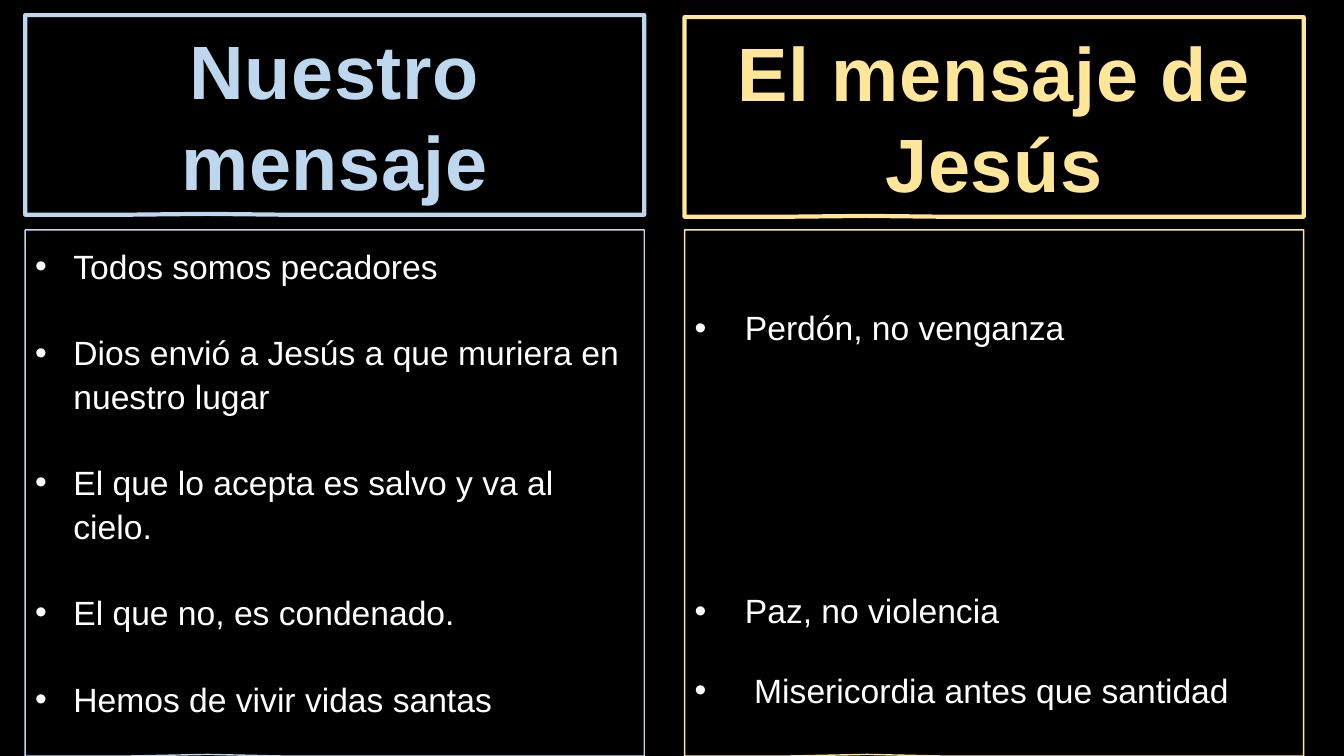
"""Build a two-column slide that compares two messages."""
from lxml.etree import SubElement
from pptx import Presentation
from pptx.dml.color import RGBColor
from pptx.enum.shapes import MSO_SHAPE as Shape
from pptx.enum.text import MSO_ANCHOR as Anchor, PP_ALIGN as Align
from pptx.oxml.ns import qn
from pptx.util import Inches, Pt

BLACK = RGBColor(0x00, 0x00, 0x00)
WHITE = RGBColor(0xFF, 0xFF, 0xFF)
BLUE = RGBColor(0xBD, 0xD7, 0xEE)
YELLOW = RGBColor(0xFF, 0xE6, 0x99)

FONT = "Arial"
BODY_LINE = 30.9
COLUMNS = [
    {
        "heading": "Nuestro mensaje", "color": BLUE,
        "left": 0.25, "top": 0.15, "indent": 0.38, "inset": 0.13,
        "points": [
            ("Todos somos pecadores", 0),
            ("Dios envió a Jesús a que muriera en nuestro lugar", BODY_LINE),
            ("El que lo acepta es salvo y va al cielo.", BODY_LINE),
            ("El que no, es condenado.", BODY_LINE),
            ("Hemos de vivir vidas santas", BODY_LINE),
        ],
    },
    {
        "heading": "El mensaje de Jesús", "color": YELLOW,
        "left": 6.79, "top": 0.17, "indent": 0.5, "inset": 0.74,
        "points": [
            ("Perdón, no venganza", 0),
            ("Paz, no violencia", 171.2),
            (" Misericordia antes que santidad", 26.2),
        ],
    },
]
SLIDE_WIDTH, SLIDE_HEIGHT = 13.33, 7.5
COLUMN_WIDTH, HEADING_HEIGHT, BODY_TOP = 6.14, 1.98, 2.28


def add_panel(slide, column, top, height, line_width, tail):
    """Add a black callout outlined in the column's colour."""
    panel = slide.shapes.add_shape(
        Shape.RECTANGULAR_CALLOUT, Inches(column["left"]), Inches(top),
        Inches(COLUMN_WIDTH), Inches(height))
    panel.adjustments[0], panel.adjustments[1] = tail
    panel.shadow.inherit = False
    panel.fill.solid()
    panel.fill.fore_color.rgb = BLACK
    panel.line.color.rgb = column["color"]
    panel.line.width = Pt(line_width)
    panel.text_frame.word_wrap = True
    return panel.text_frame


def set_font(font, size, color, bold=False):
    """Apply the slide's typeface with a size and colour."""
    font.name, font.size, font.bold = FONT, Pt(size), bold
    font.color.rgb = color


def add_heading(slide, column):
    """Add the large framed heading of a column."""
    frame = add_panel(slide, column, column["top"], HEADING_HEIGHT, 3, (-0.206, 0.496))
    frame.vertical_anchor = Anchor.MIDDLE
    paragraph = frame.paragraphs[0]
    paragraph.alignment = Align.CENTER
    paragraph.line_spacing = Pt(65)
    run = paragraph.add_run()
    run.text = column["heading"]
    set_font(run.font, 54, column["color"], True)
    run._r.get_or_add_rPr().set("spc", "50")


def add_points(slide, column):
    """Add the framed bullet list of a column."""
    frame = add_panel(slide, column, BODY_TOP, SLIDE_HEIGHT - BODY_TOP, 1, (-0.205, 0.497))
    frame.vertical_anchor = Anchor.TOP
    frame.margin_top = Inches(column["inset"])
    indent = Inches(column["indent"])
    for index, (text, gap) in enumerate(column["points"]):
        paragraph = frame.add_paragraph() if index else frame.paragraphs[0]
        paragraph.text = text
        paragraph.alignment = Align.LEFT
        paragraph.line_spacing = Pt(BODY_LINE)
        paragraph.space_before = Pt(gap)
        properties = paragraph._p.get_or_add_pPr()
        properties.set("marL", str(indent))
        properties.set("indent", str(-indent))
        SubElement(properties, qn("a:buFont"), typeface=FONT)
        SubElement(properties, qn("a:buChar"), char="•")
        set_font(paragraph.font, 24, WHITE)


def main():
    """Create the presentation and save it."""
    presentation = Presentation()
    presentation.slide_width = Inches(SLIDE_WIDTH)
    presentation.slide_height = Inches(SLIDE_HEIGHT)
    slide = presentation.slides.add_slide(presentation.slide_layouts[6])
    slide.background.fill.solid()
    slide.background.fill.fore_color.rgb = BLACK
    for column in COLUMNS:
        add_heading(slide, column)
        add_points(slide, column)
    presentation.save("out.pptx")


if __name__ == "__main__":
    main()
